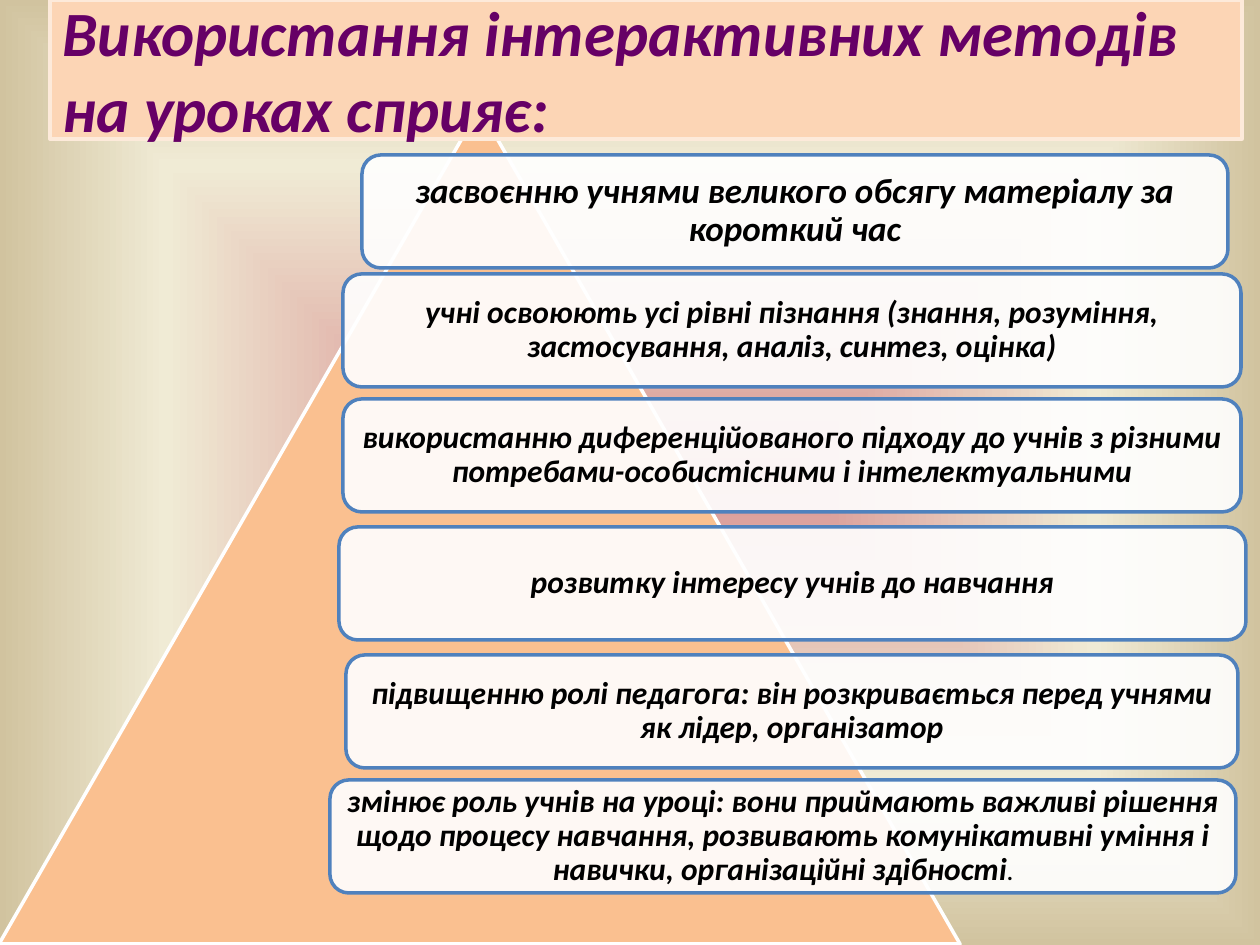
from pptx import Presentation
from pptx.dml.color import RGBColor
from pptx.enum.shapes import MSO_SHAPE as Shape
from pptx.enum.text import MSO_ANCHOR as Anchor, MSO_AUTO_SIZE as AutoSize, PP_ALIGN as Align
from pptx.oxml import parse_xml
from pptx.oxml.ns import nsdecls, qn
from pptx.util import Emu, Pt
from lxml.etree import SubElement

SCALE = 914400 / 126
CARD_HEIGHT = 113
CARDS = [
    (362, 155, 866, 20, "засвоєнню учнями великого обсягу матеріалу за короткий час"),
    (343, 274, 898, 18, "учні освоюють усі рівні пізнання (знання, розуміння, "
                        "застосування, аналіз, синтез, оцінка)"),
    (343, 399, 898, 18, "використанню диференційованого підходу до учнів з різними "
                        "потребами-особистісними і інтелектуальними"),
    (339, 527, 907, 18, "розвитку інтересу учнів до навчання"),
    (346, 655, 892, 18, "підвищенню ролі педагога: він розкривається перед учнями "
                        "як лідер, організатор"),
    (330, 780, 906, 18, "змінює роль учнів на уроці: вони приймають важливі рішення щодо процесу "
                        "навчання, розвивають комунікативні уміння і навички, організаційні здібності"),
]


def px(length):
    """Turn pixels into EMU."""
    return Emu(round(length * SCALE))


def color(code):
    """Turn a hex string into a colour."""
    return RGBColor.from_string(code)


def paint(shape, fill, line):
    """Give a shape a solid fill and a two-point outline."""
    shape.fill.solid()
    shape.fill.fore_color.rgb = color(fill)
    shape.line.color.rgb = color(line)
    shape.line.width = Pt(2)


def style(para, size, code, align):
    """Set the bold italic lettering of a paragraph."""
    para.alignment = align
    font = para.font
    font.name, font.size, font.bold, font.italic = "Calibri", Pt(size), True, True
    font.color.rgb = color(code)


def add_shape(page, kind, box, fill, line):
    """Add a painted preset shape without shadow."""
    shape = page.shapes.add_shape(kind, *map(px, box))
    shape.shadow.inherit = False
    paint(shape, fill, line)
    return shape


def set_background(page, stops):
    """Fill the page with a gradient that spreads from its centre."""
    marks = "".join(f'<a:gs pos="{at * 1000}"><a:srgbClr val="{code}"/></a:gs>' for at, code in stops)
    page.element.cSld.insert(0, parse_xml(
        f'<p:bg {nsdecls("p", "a")}><p:bgPr><a:gradFill rotWithShape="1"><a:gsLst>{marks}</a:gsLst>'
        '<a:path path="shape"><a:fillToRect l="50000" t="50000" r="50000" b="50000"/></a:path>'
        '</a:gradFill><a:effectLst/></p:bgPr></p:bg>'))


def add_card(page, left, top, width, size, text):
    """Add a translucent rounded card and return its paragraph."""
    card = add_shape(page, Shape.ROUNDED_RECTANGLE, (left, top, width, CARD_HEIGHT), "FFFFFF", "4F81BD")
    tint = card.fill._xPr.find(qn("a:solidFill"))[0]
    SubElement(tint, qn("a:alpha"), val="90000")
    frame = card.text_frame
    frame.word_wrap = True
    frame.vertical_anchor = Anchor.MIDDLE
    frame.margin_left = frame.margin_right = frame.margin_top = frame.margin_bottom = px(9)
    para = frame.paragraphs[0]
    para.add_run().text = text
    para.line_spacing = 0.9
    style(para, size, "000000", Align.CENTER)
    return para


def set_title(page, lines):
    """Turn the title placeholder into a front panel with two round corners."""
    title = page.shapes.title
    title.left, title.top, title.width, title.height = map(px, (50, 0, 1192, 139))
    title.element.spPr.append(parse_xml(
        f'<a:prstGeom {nsdecls("a")} prst="round2DiagRect"><a:avLst/></a:prstGeom>'))
    paint(title, "FCD5B5", "FDEADA")
    frame = title.text_frame
    frame.text = "\n".join(lines)
    frame.auto_size = AutoSize.NONE
    frame.vertical_anchor = Anchor.MIDDLE
    for para in frame.paragraphs:
        style(para, 36, "660066", Align.LEFT)
    page.shapes.element.append(title.element)


def main():
    """Build the slide and save it."""
    deck = Presentation()
    deck.slide_width, deck.slide_height = px(1260), px(945)
    page = deck.slides.add_slide(deck.slide_layouts[5])
    set_background(page, [(0, "D99694"), (65, "F0EBD5"), (100, "D1C39F")])
    add_shape(page, Shape.ISOSCELES_TRIANGLE, (-1, 108, 961, 836), "FAC090", "FFFFFF")
    paras = [add_card(page, *card) for card in CARDS]
    stop = paras[-1].add_run()
    stop.text = "."
    stop.font.size = Pt(13)
    set_title(page, ["Використання інтерактивних методів", "на уроках сприяє:"])
    deck.save("out.pptx")


if __name__ == "__main__":
    main()
